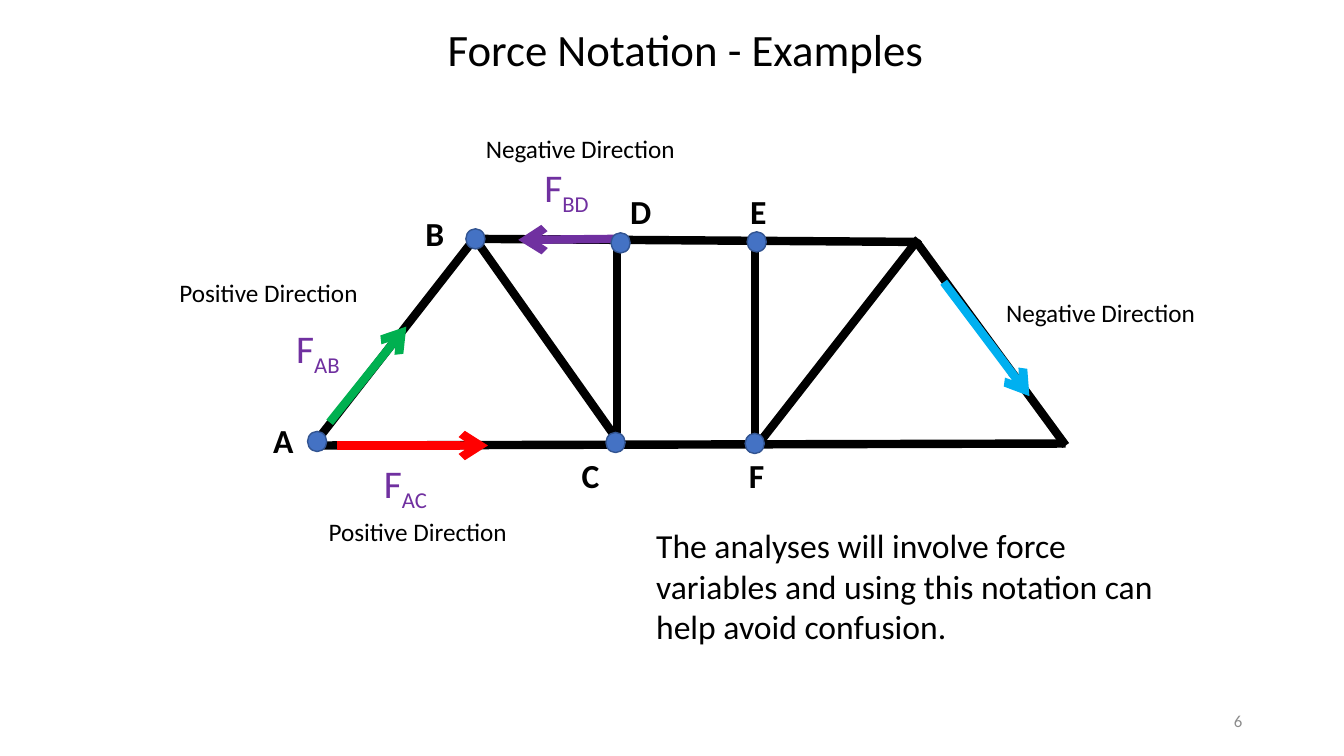
import pptx
import pptx.util
import pptx.dml.color
import pptx.enum.shapes
import pptx.enum.text
import pptx.oxml.ns
import pptx.oxml.xmlchemy

Inches = pptx.util.Inches
Pt = pptx.util.Pt
Align = pptx.enum.text.PP_ALIGN
Anchor = pptx.enum.text.MSO_ANCHOR
Element = pptx.oxml.xmlchemy.OxmlElement

COLORS = {
    "black": "000000", "red": "FF0000", "green": "00B050",
    "purple": "7030A0", "sky": "00B0F0", "joint": "4472C4",
    "rim": "325491", "gray": "8C8C8C",
}

MEMBERS = [
    (6.12, 4.43, 6.12, 2.35),
    (3.12, 4.42, 10.57, 4.4),
    (4.71, 2.37, 9.09, 2.4),
    (3.12, 4.4, 4.72, 2.35),
    (7.51, 4.42, 9.11, 2.37),
    (6.17, 4.43, 4.72, 2.38),
    (10.57, 4.42, 9.09, 2.4),
    (7.49, 4.43, 7.49, 2.35),
]
FORCES = [
    (3.34, 4.42, 4.84, 4.42, "red"),
    (3.27, 4.19, 4.03, 3.24, "green"),
    (6.11, 2.37, 5.14, 2.38, "purple"),
    (9.36, 2.8, 10.21, 3.93, "sky"),
]
# Joint name, joint left and top, label left and top
JOINTS = [
    ("A", 3.05, 4.28, 2.61, 4.12),
    ("B", 4.62, 2.27, 4.12, 2.06),
    ("C", 6.01, 4.29, 5.67, 4.46),
    ("D", 6.06, 2.31, 6.15, 1.84),
    ("E", 7.41, 2.3, 7.34, 1.84),
    ("F", 7.39, 4.3, 7.33, 4.46),
]
SYMBOLS = [
    ("AB", 2.84, 3.17, 0.74),
    ("BD", 5.3, 1.57, 0.78),
    ("AC", 3.71, 4.51, 0.74),
]
SENSES = [
    ("Positive", 3.16, 5.07),
    ("Positive", 1.68, 2.7),
    ("Negative", 4.72, 1.27),
    ("Negative", 9.88, 2.9),
]


def color(name):
    return pptx.dml.color.RGBColor.from_string(COLORS[name])


class Sketch:
    """Style settings and the slide being drawn."""

    font = "Calibri"
    weight = 6

    def __init__(self, slide):
        self.shapes = slide.shapes

    def text(self, words, left, top, width, height, size=18, ink="black",
             bold=False, align=Align.LEFT, anchor=Anchor.TOP, wrap=True, sub=""):
        """Add a text box; sub is set as a subscript after the words."""
        box = self.shapes.add_textbox(
            Inches(left), Inches(top), Inches(width), Inches(height))
        frame = box.text_frame
        frame.word_wrap = wrap
        frame.vertical_anchor = anchor
        para = frame.paragraphs[0]
        para.alignment = align
        for part in filter(None, (words, sub)):
            run = para.add_run()
            run.text = part
            run.font.name = self.font
            run.font.size = Pt(size)
            run.font.bold = bold
            run.font.color.rgb = color(ink)
        if sub:
            run._r.get_or_add_rPr().set("baseline", "-25000")

    def line(self, x1, y1, x2, y2, ink="black", arrow=False):
        bar = self.shapes.add_connector(
            pptx.enum.shapes.MSO_CONNECTOR.STRAIGHT,
            Inches(x1), Inches(y1), Inches(x2), Inches(y2))
        bar.line.color.rgb = color(ink)
        bar.line.width = Pt(self.weight)
        props = bar._element.find(pptx.oxml.ns.qn("p:spPr"))
        if arrow:
            tail = Element("a:tailEnd")
            tail.set("type", "arrow")
            props.find(pptx.oxml.ns.qn("a:ln")).append(tail)
        props.append(Element("a:effectLst"))

    def joint(self, left, top):
        dot = self.shapes.add_shape(
            pptx.enum.shapes.MSO_SHAPE.OVAL,
            Inches(left), Inches(top), Inches(0.19), Inches(0.2))
        dot.shadow.inherit = False
        dot.fill.solid()
        dot.fill.fore_color.rgb = color("joint")
        dot.line.color.rgb = color("rim")
        dot.line.width = Pt(1)


def main():
    deck = pptx.Presentation()
    deck.slide_width = Inches(13.33)
    deck.slide_height = Inches(7.5)
    truss = Sketch(deck.slides.add_slide(deck.slide_layouts[6]))

    truss.text("Force Notation - Examples", 3.71, 0.17, 6.18, 0.64,
               size=32, align=Align.CENTER)
    for ends in MEMBERS:
        truss.line(*ends)
    for force in FORCES:
        truss.line(*force, arrow=True)
    for name, x, y, left, top in JOINTS:
        truss.joint(x, y)
        truss.text(name, left, top, 0.48, 0.5, size=24, bold=True)
    for pair, left, top, width in SYMBOLS:
        truss.text("F", left, top, width, 0.57, size=28, ink="purple",
                   wrap=False, sub=pair)
    for sense, left, top in SENSES:
        truss.text(f"{sense} Direction", left, top, 2.42, 0.4)
    truss.text("The analyses will involve force variables and using this "
               "notation can help avoid confusion.",
               6.41, 5.16, 5.4, 1.31, size=24)
    truss.text("6", 9.42, 6.95, 3, 0.4, size=12, ink="gray",
               align=Align.RIGHT, anchor=Anchor.MIDDLE)

    deck.save("out.pptx")


if __name__ == "__main__":
    main()
